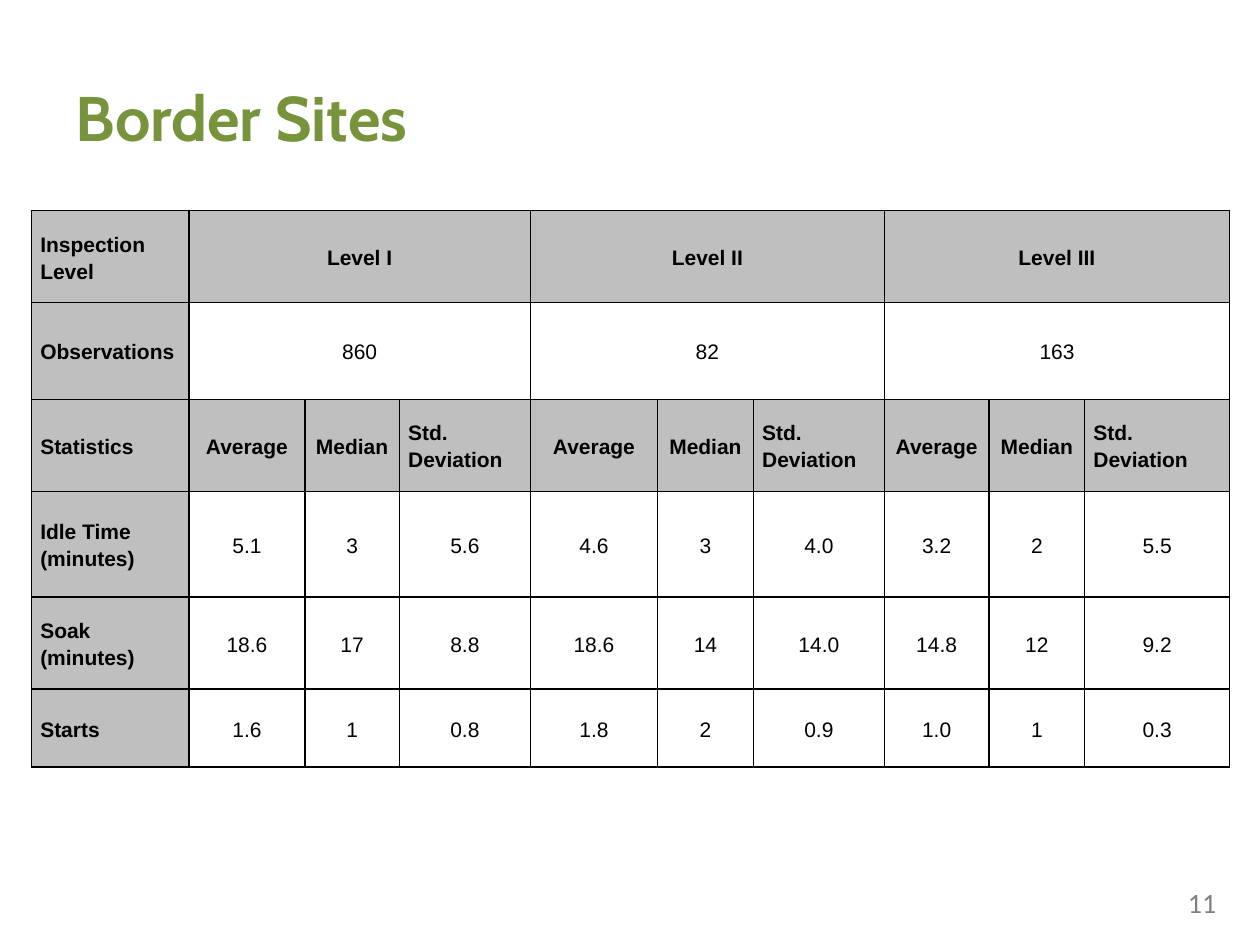
import lxml.etree
import pptx
import pptx.dml.color
import pptx.enum.text
import pptx.oxml.ns
import pptx.util

Inches = pptx.util.Inches
Pt = pptx.util.Pt
RGBColor = pptx.dml.color.RGBColor
ALIGN = pptx.enum.text.PP_ALIGN
ANCHOR = pptx.enum.text.MSO_ANCHOR
qn = pptx.oxml.ns.qn

GREEN = RGBColor(0x77, 0x93, 0x3C)
GREY = RGBColor(0x80, 0x80, 0x80)
HEADER = RGBColor(0xBF, 0xBF, 0xBF)
BLACK = RGBColor(0, 0, 0)

COL_WIDTHS = [1.25, 0.92, 0.75, 1.04, 1.01, 0.76, 1.04, 0.83, 0.76, 1.15]
ROW_HEIGHTS = [0.73, 0.77, 0.73, 0.84, 0.73, 0.62]
GROUP = 3
STATISTICS = ["Average", "Median", "Std. Deviation"]
GROUP_ROWS = [
    ["Inspection Level", "Level I", "Level II", "Level III"],
    ["Observations", "860", "82", "163"],
]
STAT_ROWS = [
    ["Statistics"] + STATISTICS * GROUP,
    ["Idle Time (minutes)", "5.1", "3", "5.6", "4.6", "3", "4.0", "3.2", "2", "5.5"],
    ["Soak (minutes)", "18.6", "17", "8.8", "18.6", "14", "14.0", "14.8", "12", "9.2"],
    ["Starts", "1.6", "1", "0.8", "1.8", "2", "0.9", "1.0", "1", "0.3"],
]


def style_text(p, font, size, color, bold=False, align=ALIGN.LEFT):
    """Format a paragraph and its runs."""
    p.alignment = align
    for r in p.runs:
        r.font.name = font
        r.font.size = Pt(size)
        r.font.bold = bold
        r.font.color.rgb = color


def add_borders(cell):
    """Draw a thin black line on all four sides of a cell."""
    tc_pr = cell._tc.get_or_add_tcPr()
    for side in ("lnL", "lnR", "lnT", "lnB"):
        ln = lxml.etree.SubElement(tc_pr, qn(f"a:{side}"), w=str(Pt(1)))
        fill = lxml.etree.SubElement(ln, qn("a:solidFill"))
        lxml.etree.SubElement(fill, qn("a:srgbClr"), val=str(BLACK))


def style_cell(cell, header):
    """Set the borders, fill, margins and anchor of a cell."""
    add_borders(cell)
    if header:
        cell.fill.solid()
        cell.fill.fore_color.rgb = HEADER
    else:
        cell.fill.background()
    cell.margin_left = cell.margin_right = Inches(0.07)
    cell.margin_top = cell.margin_bottom = 0
    cell.vertical_anchor = ANCHOR.MIDDLE


def write_cell(cell, text, header, align):
    """Put formatted text in a cell."""
    p = cell.text_frame.paragraphs[0]
    p.text = text
    p.line_spacing = 1.15
    style_text(p, "Arial", 12, BLACK, header, align)


def add_title(s, box, text):
    """Place and format the title placeholder."""
    sp = s.shapes.title
    sp.left, sp.top, sp.width, sp.height = box
    tf = sp.text_frame
    tf.text = text
    tf.vertical_anchor = ANCHOR.MIDDLE
    style_text(tf.paragraphs[0], "Cabin", 36, GREEN, True)


def add_statistics_table(s, box):
    """Add the table of statistics by inspection level."""
    table = s.shapes.add_table(len(ROW_HEIGHTS), len(COL_WIDTHS), *box).table
    table.first_row = table.horz_banding = False
    for column, width in zip(table.columns, COL_WIDTHS):
        column.width = Inches(width)
    for row, height in zip(table.rows, ROW_HEIGHTS):
        row.height = Inches(height)
    for i, texts in enumerate(GROUP_ROWS + STAT_ROWS):
        grouped = i < len(GROUP_ROWS)
        for j in range(len(COL_WIDTHS)):
            style_cell(table.cell(i, j), j == 0 or i in (0, 2))
        for j, text in enumerate(texts):
            col = 1 + (j - 1) * GROUP if grouped and j else j
            cell = table.cell(i, col)
            if grouped and j:
                cell.merge(table.cell(i, col + GROUP - 1))
            left = j == 0 or text == STATISTICS[-1]
            align = ALIGN.LEFT if left else ALIGN.CENTER
            write_cell(cell, text, j == 0 or i in (0, 2), align)


def add_slide_number(s, box, text):
    """Add the slide number."""
    tf = s.shapes.add_textbox(*box).text_frame
    tf.word_wrap = True
    tf.text = text
    style_text(tf.paragraphs[0], "Calibri", 16, GREY)


def main():
    """Build the slide and save it."""
    prs = pptx.Presentation()
    prs.slide_width, prs.slide_height = Inches(10), Inches(7.5)
    s = prs.slides.add_slide(prs.slide_layouts.get_by_name("Title Only"))
    add_title(s, [Inches(v) for v in (0.5, 0.3, 9, 1.25)], "Border Sites")
    add_statistics_table(s, [Inches(v) for v in (0.25, 1.67, 9.5, 4.42)])
    add_slide_number(s, [Inches(v) for v in (9.33, 6.98, 0.5, 0.37)], "11")
    prs.save("out.pptx")


if __name__ == "__main__":
    main()
